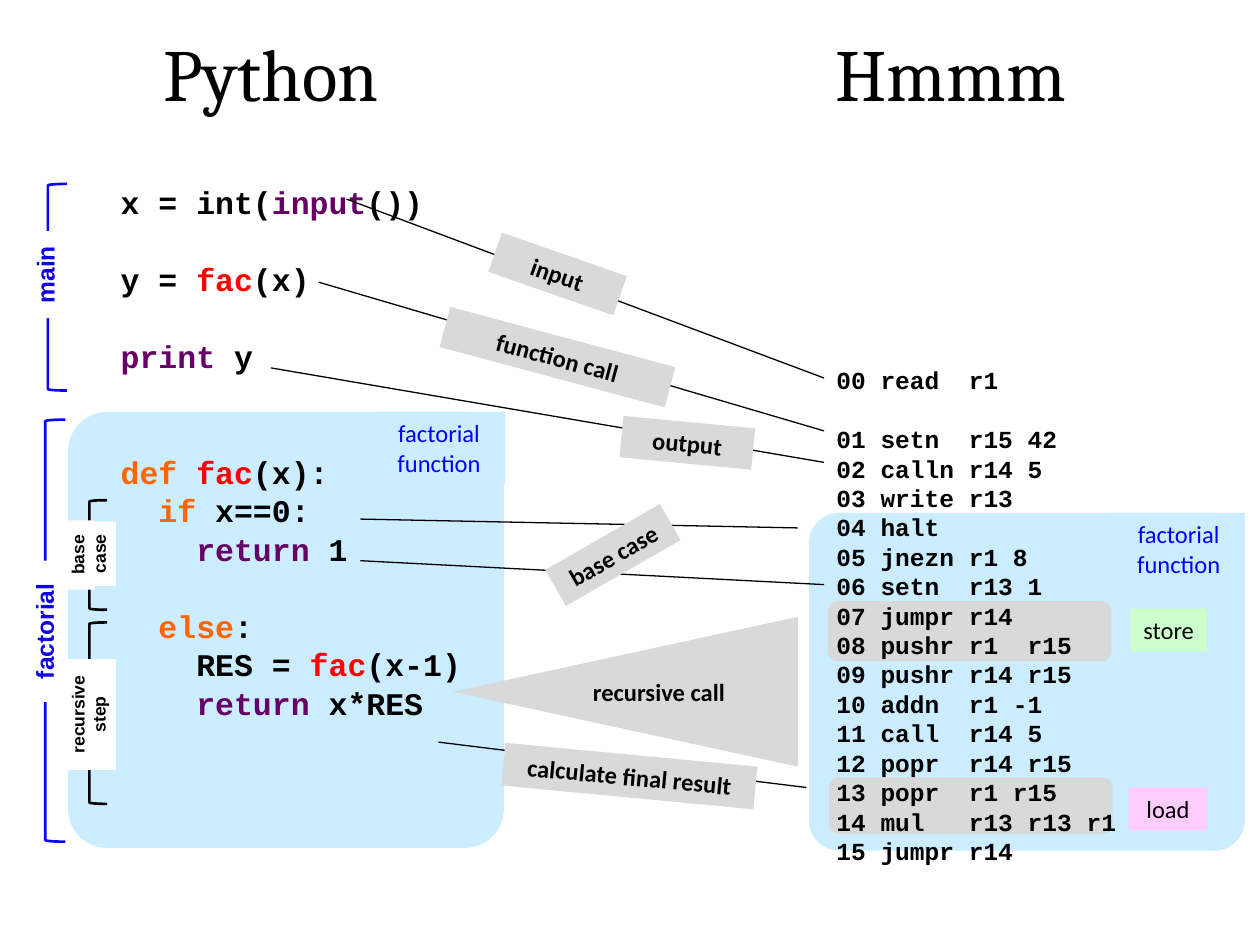
import pptx
import pptx.util
import pptx.dml.color
import pptx.enum.shapes
import pptx.enum.text
import pptx.oxml.ns
import lxml.etree

Inches = pptx.util.Inches
Pt = pptx.util.Pt
SHAPE = pptx.enum.shapes.MSO_SHAPE
ANCHOR = pptx.enum.text.MSO_ANCHOR
CENTER = pptx.enum.text.PP_ALIGN.CENTER

COLORS = {
    "black": "000000", "white": "FFFFFF", "sky": "CCECFF", "gray": "D9D9D9",
    "purple": "660066", "red": "FF0000", "orange": "FF6600", "blue": "0000FF",
    "bracket": "0B04FF", "navy": "0F02E4", "green": "CCFFCC", "pink": "FFCCFF",
}
RGB = {k: pptx.dml.color.RGBColor.from_string(v) for k, v in COLORS.items()}


def add_shape(kind, box, fill=None, rotation=0, adj=None):
    sp = s.shapes.add_shape(kind, *[Inches(v) for v in box])
    sp.shadow.inherit = False
    sp.line.fill.background()
    sp.rotation = rotation
    if fill:
        sp.fill.solid()
        sp.fill.fore_color.rgb = RGB[fill]
    else:
        sp.fill.background()
    if adj is not None:
        sp.adjustments[0] = adj
    return sp


def write(sp, lines, font, size, bold=False, align=None, anchor=ANCHOR.MIDDLE,
          pitch=None, margin=(0, 0), wrap=True):
    tf = sp.text_frame
    tf.auto_size = pptx.enum.text.MSO_AUTO_SIZE.NONE
    tf.word_wrap = wrap
    tf.vertical_anchor = anchor
    tf.margin_left = tf.margin_right = Inches(margin[0])
    tf.margin_top = tf.margin_bottom = Inches(margin[1])
    for i, (gap, runs) in enumerate(lines):
        p = tf.paragraphs[0] if i == 0 else tf.add_paragraph()
        p.alignment = align
        if pitch:
            p.line_spacing = Pt(pitch)
            p.space_before = Pt(gap * pitch)
        for text, color in runs:
            r = p.add_run()
            r.text = text
            r.font.name = font
            r.font.size = Pt(size)
            r.font.bold = bold
            r.font.color.rgb = RGB[color]


prs = pptx.Presentation()
prs.slide_width = Inches(10)
prs.slide_height = Inches(7.5)
s = prs.slides.add_slide(prs.slide_layouts[5])

title = s.shapes.title
title.left, title.top, title.width, title.height = [Inches(v) for v in (1.15, 0.17, 2, 0.81)]
hmmm_heading = s.shapes.add_textbox(Inches(6.4), Inches(0.17), Inches(2.29), Inches(0.81))
for sp, text in ((title, "Python"), (hmmm_heading, "Hmmm")):
    write(sp, [(0, [(text, "black")])], "Cambria", 42, align=CENTER)

for box, fill, adj in (
    ((0.54, 3.27, 3.46, 3.46), "sky", 0.09),
    ((6.42, 4.07, 3.46, 2.68), "sky", 0.09),
    ((6.58, 6.17, 2.25, 0.45), "gray", 0.17),
    ((6.57, 4.77, 2.25, 0.48), "gray", 0.17),
):
    add_shape(SHAPE.ROUNDED_RECTANGLE, box, fill, adj=adj)

python_code = [
    (0, [("x = int(", "black"), ("input", "purple"), ("())", "black")]),
    (1, [("y = ", "black"), ("fac", "red"), ("(x)", "black")]),
    (1, [("print ", "purple"), ("y", "black")]),
    (2, [("def ", "orange"), ("fac", "red"), ("(x):", "black")]),
    (0, [("  if ", "orange"), ("x==0:", "black")]),
    (0, [("    return ", "purple"), ("1", "black")]),
    (1, [("  else", "orange"), (":", "black")]),
    (0, [("    RES = ", "black"), ("fac", "red"), ("(x-1)", "black")]),
    (0, [("    return ", "purple"), ("x*RES", "black")]),
]
hmmm_code = [
    "00 read  r1", "01 setn  r15 42", "02 calln r14 5", "03 write r13",
    "04 halt", "05 jnezn r1 8", "06 setn  r13 1", "07 jumpr r14",
    "08 pushr r1  r15", "09 pushr r14 r15", "10 addn  r1 -1", "11 call  r14 5",
    "12 popr  r14 r15", "13 popr  r1 r15", "14 mul   r13 r13 r1", "15 jumpr r14",
]
hmmm_lines = [(1 if i == 1 else 0, [(line, "black")]) for i, line in enumerate(hmmm_code)]
for box, lines, size, pitch in (
    ((0.86, 1.4, 3.26, 4.64), python_code, 18, 22),
    ((6.54, 2.85, 2.47, 4.07), hmmm_lines, 14, 16.8),
):
    sp = s.shapes.add_textbox(*[Inches(v) for v in box])
    write(sp, lines, "Courier New", size, True, anchor=ANCHOR.TOP,
          pitch=pitch, margin=(0.1, 0.05), wrap=False)

for box, color in (
    ((0.38, 1.46, 0.15, 1.64), "bracket"),
    ((0.36, 3.33, 0.16, 3.35), "bracket"),
    ((0.71, 4.94, 0.14, 1.44), "black"),
    ((0.71, 3.97, 0.14, 0.87), "black"),
):
    sp = add_shape(SHAPE.LEFT_BRACKET, box, adj=0.08)
    sp.line.color.rgb = RGB[color]
    sp.line.width = Pt(1.5)

for x1, y1, x2, y2 in (
    (2.75, 1.58, 6.54, 3), (2.53, 2.24, 6.54, 3.42), (2.15, 2.92, 6.54, 3.67),
    (2.86, 4.12, 6.33, 4.19), (2.86, 4.45, 6.54, 4.64), (3.48, 5.89, 6.4, 6.25),
):
    line = s.shapes.add_connector(pptx.enum.shapes.MSO_CONNECTOR.STRAIGHT,
                                  Inches(x1), Inches(y1), Inches(x2), Inches(y2))
    line.line.color.rgb = RGB["black"]
    line.line.width = Pt(0.75)
    lxml.etree.SubElement(line._element.spPr, pptx.oxml.ns.qn("a:effectLst"))

add_shape(SHAPE.ISOSCELES_TRIANGLE, (4.37, 4.12, 1.19, 2.74), "gray", 270)

for text, box, rotation, fill, color, font, size, bold in (
    ("factorial", (-0.21, 4.84, 1.12, 0.34), 270, "white", "navy", "Arial", 14, True),
    ("main", (0.01, 2.01, 0.69, 0.34), 270, "white", "navy", "Arial", 14, True),
    ("recursive step", (0.26, 5.45, 0.88, 0.44), 270, "white", "black", "Arial", 10, True),
    ("case", (0.53, 4.26, 0.51, 0.27), 270, "white", "black", "Arial", 10, True),
    ("base", (0.34, 4.27, 0.55, 0.27), 270, "white", "black", "Arial", 10, True),
    ("store", (8.97, 4.83, 0.61, 0.34), 0, "green", "black", "Calibri", 14, False),
    ("load", (8.96, 6.25, 0.62, 0.34), 0, "pink", "black", "Calibri", 14, False),
    ("factorial function", (8.83, 4.07, 1.05, 0.57), 0, "sky", "blue", "Calibri", 14, False),
    ("factorial function", (2.96, 3.27, 1.05, 0.57), 0, "sky", "blue", "Calibri", 14, False),
    ("input", (3.9, 2.01, 1.05, 0.33), 19.2, "gray", "black", "Calibri", 14, True),
    ("function call", (3.5, 2.67, 1.85, 0.33), 15, "gray", "black", "Calibri", 14, True),
    ("output", (4.93, 3.35, 1.05, 0.33), 5.4, "gray", "black", "Calibri", 14, True),
    ("base case", (4.34, 4.24, 1.05, 0.33), 330.1, "gray", "black", "Calibri", 14, True),
    ("recursive call", (4.6, 5.32, 1.26, 0.34), 0, None, "black", "Calibri", 14, True),
    ("calculate final result", (3.99, 5.99, 2.01, 0.34), 5.4, "gray", "black", "Calibri", 14, True),
):
    sp = add_shape(SHAPE.RECTANGLE, box, fill, rotation)
    write(sp, [(0, [(text, color)])], font, size, bold, CENTER)

prs.save("out.pptx")
